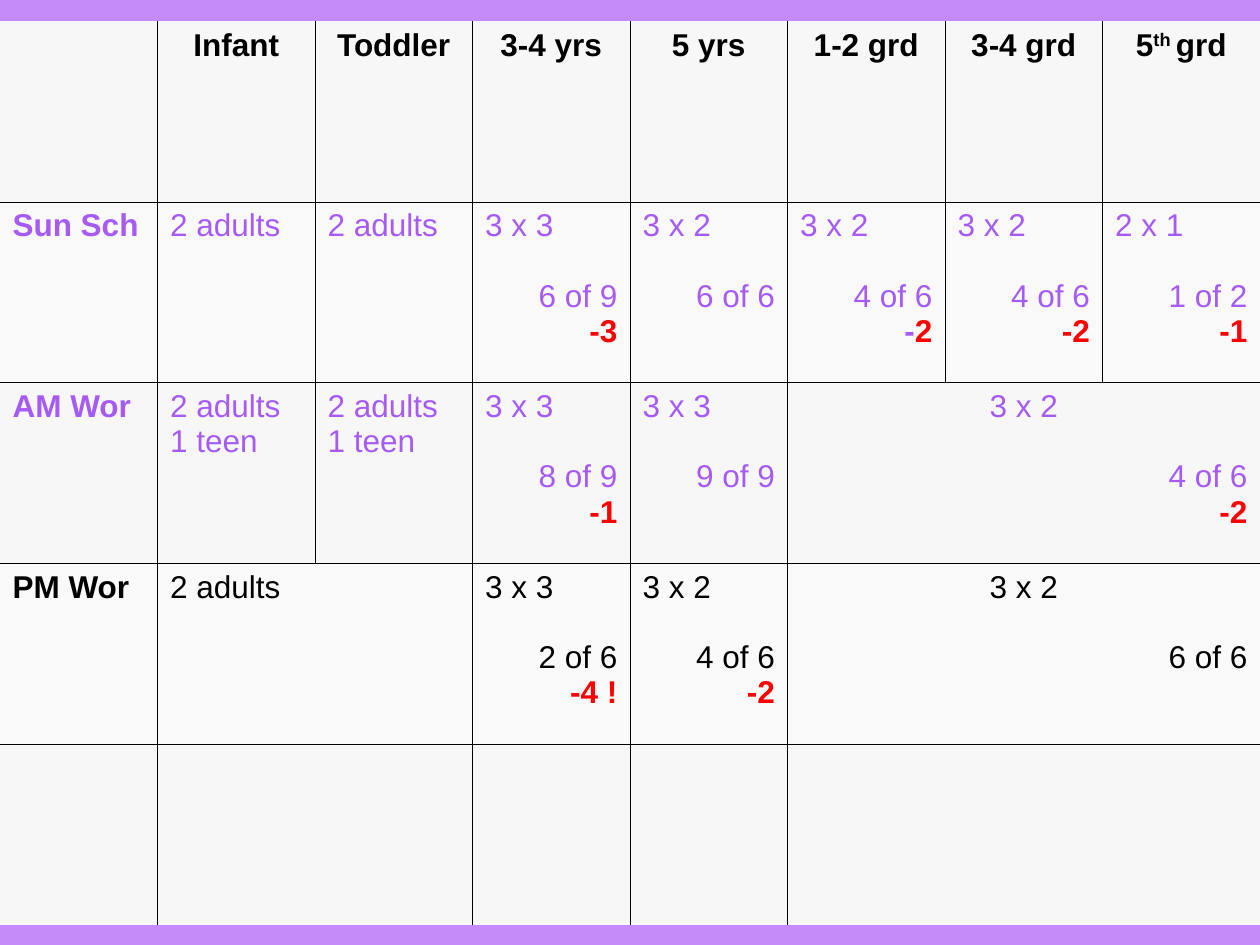
import pptx
import pptx.dml.color
import pptx.enum.text
import pptx.oxml.ns
import pptx.util
from lxml import etree
from pptx.util import Inches

BLACK, PURPLE, RED = "000000", "A65BF4", "FF0000"
BACKGROUND, PLAIN, LIGHT = "C58BF9", "F7F7F7", "F9F9F9"
ALIGN = pptx.enum.text.PP_ALIGN
COLUMNS = 8


def color(value):
    return pptx.dml.color.RGBColor.from_string(value)


class Deck:
    font_name = "Arial"
    font_size = pptx.util.Pt(18)
    border_width = pptx.util.Pt(0.5)

    def __init__(self):
        self.presentation = pptx.Presentation()
        self.presentation.slide_width = Inches(10)
        self.presentation.slide_height = Inches(7.5)
        self.slide = self.presentation.slides.add_slide(self.presentation.slide_layouts[6])
        background = self.slide.background.fill
        background.solid()
        background.fore_color.rgb = color(BACKGROUND)

    def table(self, rows, columns, left, top, width, height):
        frame = self.slide.shapes.add_table(rows, columns, left, top, width, height)
        table = frame.table
        table.first_row = table.horz_banding = False
        for column in table.columns:
            column.width = int(width / columns)
        for row in table.rows:
            row.height = int(height / rows)
        return table

    def border(self, cell, side, visible):
        properties = cell._tc.get_or_add_tcPr()
        line = etree.SubElement(properties, pptx.oxml.ns.qn("a:ln" + side),
                                w=str(self.border_width))
        if visible:
            fill = etree.SubElement(line, pptx.oxml.ns.qn("a:solidFill"))
            etree.SubElement(fill, pptx.oxml.ns.qn("a:srgbClr"), val=BLACK)
        else:
            etree.SubElement(line, pptx.oxml.ns.qn("a:noFill"))

    def style_cell(self, table, row, column, fill):
        """Rule the inner edges only, then fill the cell."""
        cell = table.cell(row, column)
        end = column + (cell.span_width if cell.is_merge_origin else 1)
        edges = {"L": column > 0, "R": end < len(table.columns),
                 "T": row > 0, "B": row < len(table.rows) - 1}
        for side, visible in edges.items():
            self.border(cell, side, visible)
        cell.fill.solid()
        cell.fill.fore_color.rgb = color(fill)

    def line(self, cell, index, text, text_color, bold=False, align=ALIGN.LEFT, gap=0):
        """Write one paragraph; text is a string or a list of (text, color, baseline)."""
        frame = cell.text_frame
        paragraph = frame.add_paragraph() if index else frame.paragraphs[0]
        paragraph.alignment = align
        if gap:
            paragraph.space_before = pptx.util.Pt(gap)
        paragraph.font.name, paragraph.font.size = self.font_name, self.font_size
        paragraph.font.bold = bold
        parts = [(text, text_color, 0)] if isinstance(text, str) else text
        for part, part_color, baseline in parts:
            run = paragraph.add_run()
            run.text = part
            run.font.name, run.font.size = self.font_name, self.font_size
            run.font.bold = bold
            run.font.color.rgb = color(part_color)
            if baseline:
                run.font._element.set("baseline", str(baseline * 1000))

    def staffing(self, cell, lines, text_color):
        """Need on top, filled places one blank line lower, shortage in red."""
        wide = cell.is_merge_origin and cell.span_width == 3
        for index, text in enumerate(lines):
            if not isinstance(text, str) or text.startswith("-"):
                self.line(cell, index, text, RED, True, ALIGN.RIGHT)
            elif " of " in text:
                self.line(cell, index, text, text_color, align=ALIGN.RIGHT, gap=20)
            else:
                align = ALIGN.CENTER if wide else ALIGN.LEFT
                self.line(cell, index, text, text_color, align=align)


HEADERS = ["Infant", "Toddler", "3-4 yrs", "5 yrs", "1-2 grd", "3-4 grd",
           [("5", BLACK, 0), ("th ", BLACK, 30), ("grd", BLACK, 0)]]

# Label, text color, and lines by column
SERVICES = [
    ("Sun Sch", PURPLE, {
        1: ["2 adults"], 2: ["2 adults"],
        3: ["3 x 3", "6 of 9", "-3"], 4: ["3 x 2", "6 of 6"],
        5: ["3 x 2", "4 of 6", [("-", PURPLE, 0), ("2", RED, 0)]],
        6: ["3 x 2", "4 of 6", "-2"], 7: ["2 x 1", "1 of 2", "-1"]}),
    ("AM Wor", PURPLE, {
        1: ["2 adults", "1 teen"], 2: ["2 adults", "1 teen"],
        3: ["3 x 3", "8 of 9", "-1"], 4: ["3 x 3", "9 of 9"],
        5: ["3 x 2", "4 of 6", "-2"]}),
    ("PM Wor", BLACK, {
        1: ["2 adults"], 3: ["3 x 3", "2 of 6", "-4 !"],
        4: ["3 x 2", "4 of 6", "-2"], 5: ["3 x 2", "6 of 6"]}),
]
# Row, first column, last column
MERGES = [(2, 5, 7), (3, 1, 2), (3, 5, 7), (4, 1, 2), (4, 5, 7)]


def main():
    deck = Deck()
    table = deck.table(5, COLUMNS, 0, Inches(0.17), Inches(10), Inches(7.17))

    # Grid
    for row, first, last in MERGES:
        table.cell(row, first).merge(table.cell(row, last))
    for row in range(5):
        for column in range(COLUMNS):
            deck.style_cell(table, row, column, LIGHT if row % 2 else PLAIN)

    # Age groups
    for column, header in enumerate(HEADERS, 1):
        deck.line(table.cell(0, column), 0, header, BLACK, True, ALIGN.CENTER)

    # Services
    for row, (label, text_color, entries) in enumerate(SERVICES, 1):
        deck.line(table.cell(row, 0), 0, label, text_color, True)
        for column, lines in entries.items():
            deck.staffing(table.cell(row, column), lines, text_color)

    deck.presentation.save("out.pptx")


if __name__ == "__main__":
    main()
